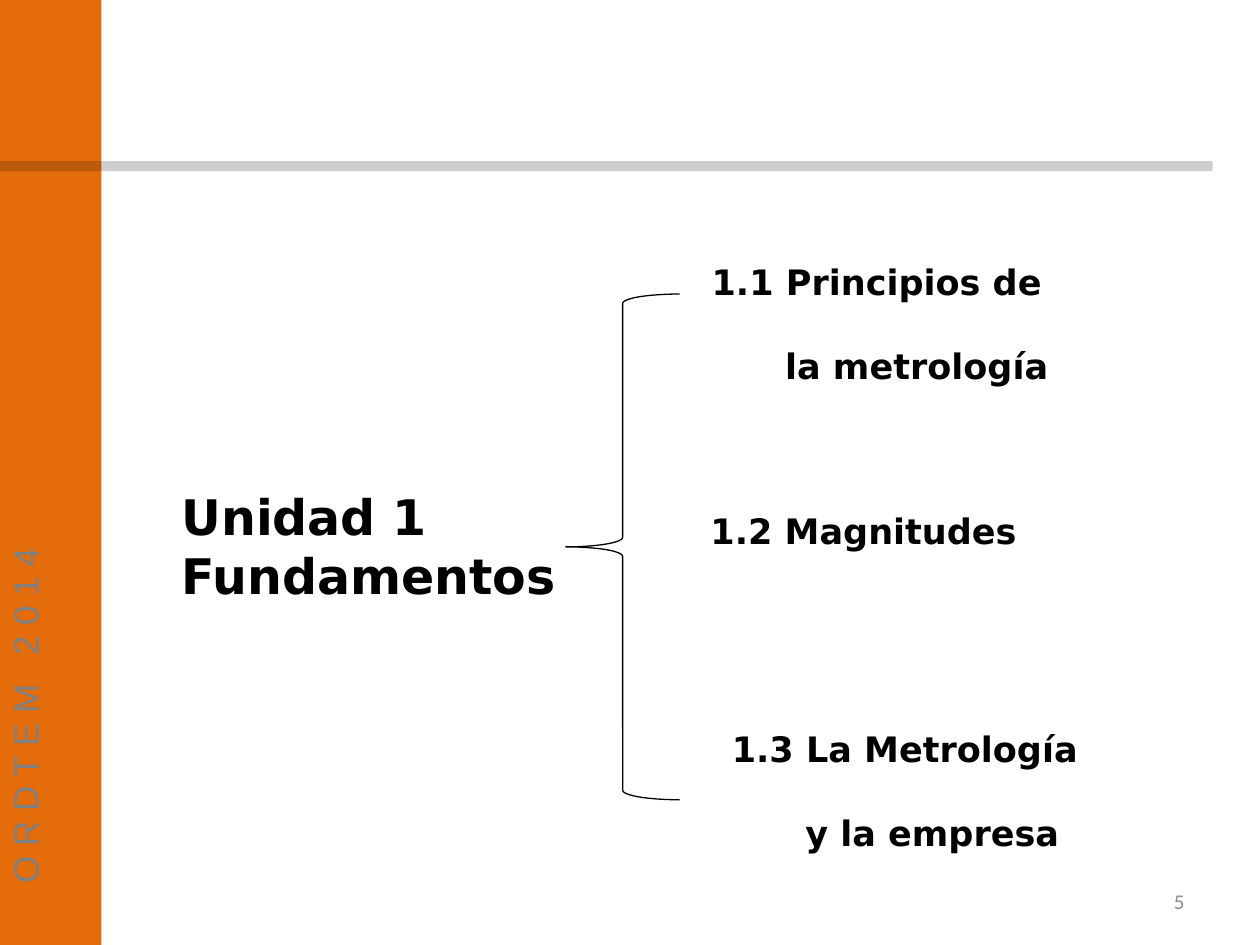
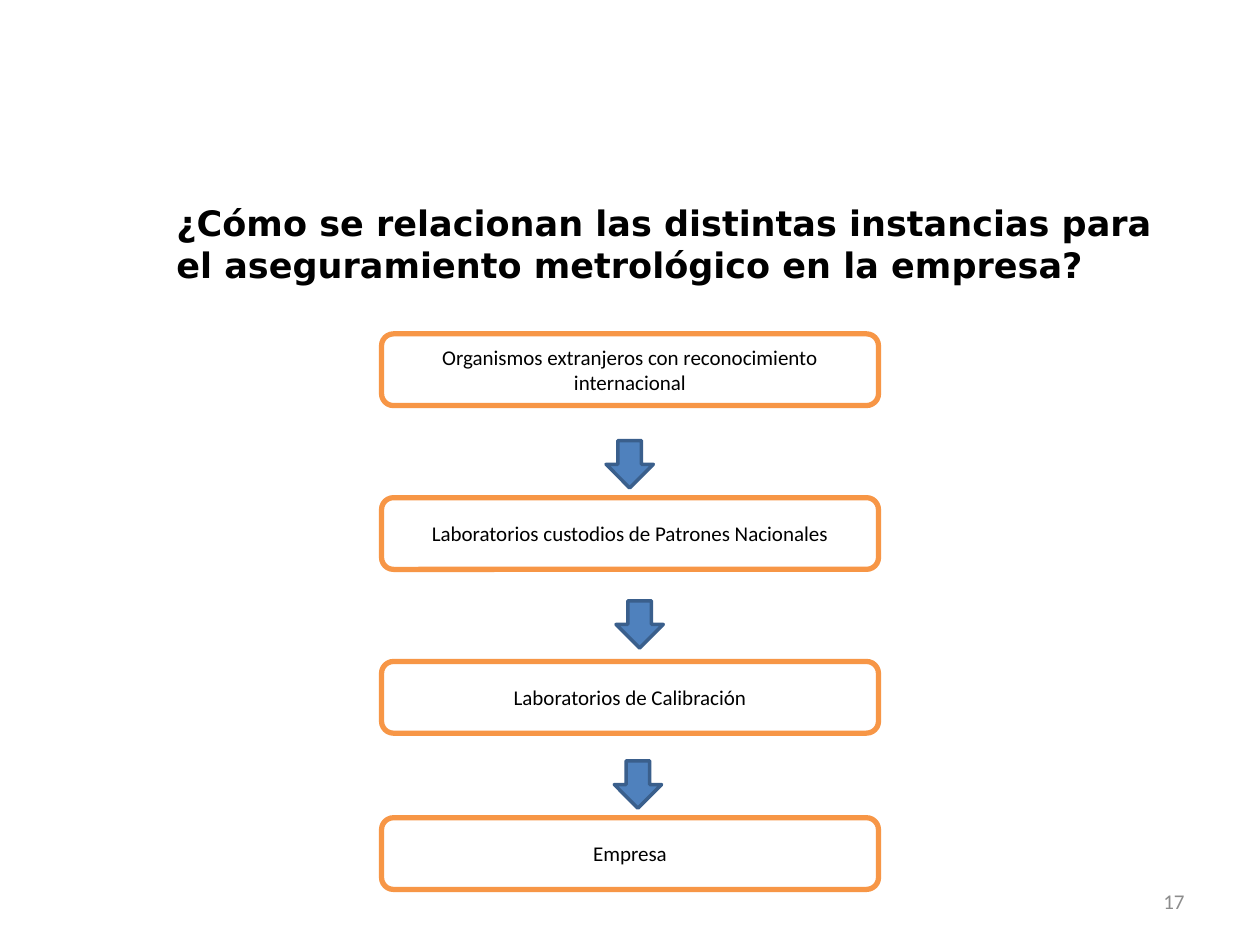
from lxml import etree
from pptx import Presentation
from pptx.dml.color import RGBColor
from pptx.enum.shapes import MSO_SHAPE as Preset
from pptx.enum.text import MSO_ANCHOR as Anchor, PP_ALIGN as Align
from pptx.oxml.ns import qn
from pptx.util import Pt

ORANGE = RGBColor(0xE4, 0x6C, 0x0A)
STEP_BORDER = RGBColor(0xF7, 0x96, 0x46)
ARROW_BLUE = RGBColor(0x4F, 0x81, 0xBD)
ARROW_EDGE = RGBColor(0x3A, 0x5F, 0x8C)
RULE_DARK = RGBColor(0x0D, 0x0D, 0x0D)
BAND_GRAY = RGBColor(0x80, 0x80, 0x80)
NUMBER_GRAY = RGBColor(0x8C, 0x8C, 0x8C)
BLACK = RGBColor(0, 0, 0)
WHITE = RGBColor(0xFF, 0xFF, 0xFF)
HEADING, BODY, BAND = "DejaVu Sans", "Calibri", "Arial"


def add_run(paragraph, text, size, font, color=BLACK, bold=False):
    run = paragraph.add_run()
    run.text = text
    run.font.size = Pt(size)
    run.font.name = font
    run.font.bold = bold
    run.font.color.rgb = color
    return run


def add_box(slide, box):
    frame = slide.shapes.add_textbox(*map(Pt, box)).text_frame
    frame.word_wrap = True
    return frame


def add_preset(slide, preset, box, fill=None, line=None, width=1):
    shape = slide.shapes.add_shape(preset, *map(Pt, box))
    shape.shadow.inherit = False
    if fill is None:
        shape.fill.background()
    else:
        shape.fill.solid()
        shape.fill.fore_color.rgb = fill
    if line is None:
        shape.line.fill.background()
    else:
        shape.line.color.rgb = line
        shape.line.width = Pt(width)
    return shape


def add_lines(frame, lines, size, indent=0, gap=0):
    """Bold heading lines; those after the first take the indent and gap."""
    for index, text in enumerate(lines):
        paragraph = frame.add_paragraph() if index else frame.paragraphs[0]
        paragraph.alignment = Align.LEFT
        if index and indent:
            paragraph._p.get_or_add_pPr().set("marL", str(Pt(indent)))
        if index and gap:
            paragraph.space_before = Pt(gap)
        add_run(paragraph, text, size, HEADING, bold=True)


def set_title(slide, box, lines, size):
    title = slide.shapes.title
    title.left, title.top, title.width, title.height = map(Pt, box)
    title.text_frame.vertical_anchor = Anchor.TOP
    add_lines(title.text_frame, lines, size)


def add_page_number(slide, number):
    frame = add_box(slide, (516, 500.4, 168, 28.8))
    frame.vertical_anchor = Anchor.MIDDLE
    frame.paragraphs[0].alignment = Align.RIGHT
    add_run(frame.paragraphs[0], number, 12, BODY, NUMBER_GRAY)


def add_side_band(slide, box):
    left, top, width, height = box
    add_preset(slide, Preset.RECTANGLE, box, ORANGE)

    # Translucent rule across the band
    rule = add_preset(slide, Preset.ROUNDED_RECTANGLE,
                      (left - 2, top + 92, 695, 5.8), RULE_DARK)
    color = rule._element.spPr.find(qn("a:solidFill"))[0]
    etree.SubElement(color, qn("a:alpha")).set("val", "20000")

    # Vertical course label, with a wider space between name and year
    frame = add_box(slide, (left - 1.5, top + 21, 39, 491))
    frame._txBody.bodyPr.set("vert", "vert270")
    label = frame.paragraphs[0]
    for text, spacing in (("O R D T E M", 0), (" ", 1110), ("2 0 1 4", 0)):
        run = add_run(label, text, 20, BAND, BAND_GRAY)
        run._r.get_or_add_rPr().set("spc", str(spacing))


def add_unit_topics(slide, box):
    left, top, width, height = box
    add_preset(slide, Preset.LEFT_BRACE, box, line=BLACK, width=0.75)
    topics = (
        (76.3, -22.5, ("1.1 Principios de", "la metrología")),
        (75.6, 119.5, ("1.2 Magnitudes",)),
        (87.8, 244, ("1.3 La Metrología", "y la empresa")),
    )
    for dx, dy, lines in topics:
        frame = add_box(slide, (left + dx, top + dy, 216, 32 * len(lines)))
        add_lines(frame, lines, 20, indent=42, gap=24)


def add_chain(slide, box):
    left, top, width, height = box
    steps = (
        (0, "Organismos extranjeros con reconocimiento internacional"),
        (93.6, "Laboratorios custodios de Patrones Nacionales"),
        (187.2, "Laboratorios de Calibración"),
        (276.5, "Empresa"),
    )
    for dy, text in steps:
        step = add_preset(slide, Preset.ROUNDED_RECTANGLE,
                          (left, top + dy, width, 41), WHITE, STEP_BORDER, 3)
        frame = step.text_frame
        frame.word_wrap = True
        frame.vertical_anchor = Anchor.MIDDLE
        frame.paragraphs[0].alignment = Align.CENTER
        add_run(frame.paragraphs[0], text, 12, BODY)

    # Arrows between the steps
    for dx, dy in ((128.3, 61), (134, 152.5), (133, 244)):
        add_preset(slide, Preset.DOWN_ARROW, (left + dx, top + dy, 27, 27),
                   ARROW_BLUE, ARROW_EDGE, 2)


def build_unit_slide(slide):
    add_side_band(slide, (0, 0, 58, 540))
    add_page_number(slide, "5")
    set_title(slide, (96.5, 274.3, 397, 75), ("Unidad 1", "Fundamentos"), 28)
    add_unit_topics(slide, (323.3, 168, 65, 289))


def build_relations_slide(slide):
    add_page_number(slide, "17")
    question = ("¿Cómo se relacionan las distintas instancias para "
                "el aseguramiento metrológico en la empresa?")
    set_title(slide, (93.6, 111.6, 584, 55.5), (question,), 20)
    add_chain(slide, (218, 190.8, 284, 317.5))


def main():
    deck = Presentation()
    deck.slide_width, deck.slide_height = Pt(720), Pt(540)
    title_only = deck.slide_layouts[5]
    for build in (build_unit_slide, build_relations_slide):
        build(deck.slides.add_slide(title_only))
    deck.save("out.pptx")


if __name__ == "__main__":
    main()
